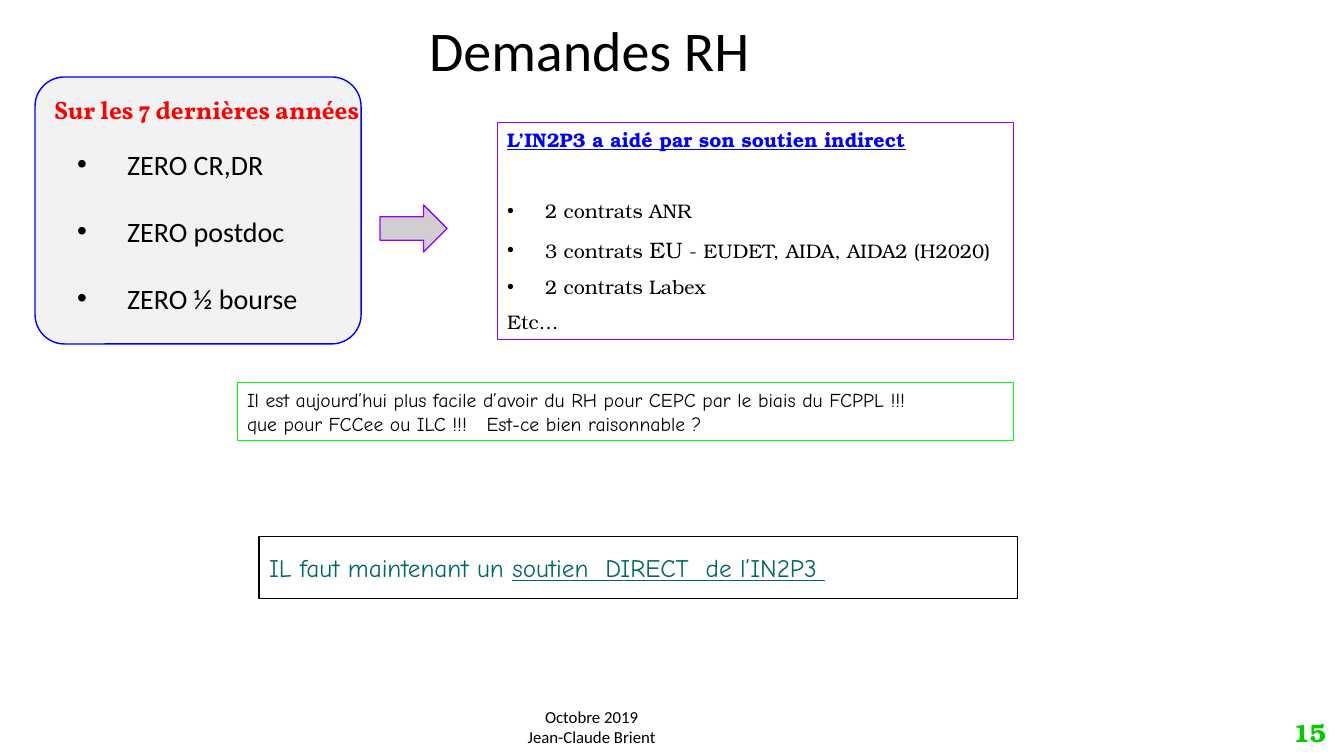
from lxml import etree
from pptx import Presentation
from pptx.dml.color import RGBColor
from pptx.enum.shapes import MSO_SHAPE
from pptx.enum.text import MSO_ANCHOR, MSO_AUTO_SIZE, PP_ALIGN
from pptx.oxml.ns import qn
from pptx.util import Inches, Pt

ROUNDED, ARROW = MSO_SHAPE.ROUNDED_RECTANGLE, MSO_SHAPE.RIGHT_ARROW
RECTANGLE = MSO_SHAPE.RECTANGLE
LEFT, CENTER, RIGHT = PP_ALIGN.LEFT, PP_ALIGN.CENTER, PP_ALIGN.RIGHT
TOP, MIDDLE = MSO_ANCHOR.TOP, MSO_ANCHOR.MIDDLE
FIT, FIXED = MSO_AUTO_SIZE.SHAPE_TO_FIT_TEXT, MSO_AUTO_SIZE.NONE

SANS, SERIF, COMIC, HEADING = "Calibri", "TeX Gyre Bonum", "Comic Neue", "Vollkorn"
BLACK, BLUE, PURPLE = "000000", "0000FF", "9900FF"
PX_PER_INCH = 100.8


def px(value):
    return round(value * Inches(1) / PX_PER_INCH)


def color(hex_code):
    return RGBColor.from_string(hex_code)


def add_outlined(slide, kind, box, line, weight=0.75, fill=None):
    """Draw a preset shape with an outline and an optional fill."""
    shape = slide.shapes.add_shape(kind, *map(px, box))
    shape.shadow.inherit = False
    if fill:
        shape.fill.solid()
        shape.fill.fore_color.rgb = color(fill)
    else:
        shape.fill.background()
    shape.line.color.rgb = color(line)
    shape.line.width = Pt(weight)
    return shape


def add_label(slide, box):
    return slide.shapes.add_textbox(*map(px, box))


def set_frame(shape, wrap=False, anchor=TOP, inset=5, size=FIT):
    frame = shape.text_frame
    frame.auto_size = size
    frame.word_wrap = wrap
    frame.vertical_anchor = anchor
    frame.margin_left = frame.margin_right = px(10)
    frame.margin_top = frame.margin_bottom = px(inset)
    return frame


def write(frame, lines, font, size, ink=BLACK, bold=False, align=LEFT):
    """Add one paragraph per line; the first fills the empty paragraph."""
    written = []
    for line in lines:
        unused = not frame.paragraphs[0].runs
        paragraph = frame.paragraphs[0] if unused else frame.add_paragraph()
        paragraph.add_run().text = line
        paragraph.alignment = align
        paragraph.font.name = font
        paragraph.font.size = Pt(size)
        paragraph.font.bold = bold
        paragraph.font.color.rgb = color(ink)
        written.append(paragraph)
    return written


def add_bullets(paragraphs, indent):
    for paragraph in paragraphs:
        properties = paragraph._p.get_or_add_pPr()
        properties.set("marL", str(px(indent)))
        properties.set("indent", str(-px(indent)))
        bullet_font = etree.Element(qn("a:buFont"), typeface="Arial")
        bullet = etree.Element(qn("a:buChar"), char="•")
        position = next((i for i, child in enumerate(properties)
                         if child.tag == qn("a:defRPr")), len(properties))
        properties[position:position] = [bullet_font, bullet]


def add_zero_panel(slide):
    panel = add_outlined(slide, ROUNDED, (35, 77, 326, 267), BLUE, 1, "F2F2F2")
    panel.adjustments[0] = 0.11
    write(set_frame(add_label(slide, (44, 89, 328, 40))),
          ["Sur les 7 dernières années"], HEADING, 18, "FF0000", bold=True)
    zeros = write(set_frame(add_label(slide, (67, 142, 243, 179))),
                  ["ZERO CR,DR", "ZERO postdoc", "ZERO ½ bourse"], SANS, 20)
    for zero in zeros[1:]:
        zero.space_before = Pt(24)
    add_bullets(zeros, 50)


def add_support_panel(slide):
    panel = add_outlined(slide, RECTANGLE, (497, 123, 516, 217), PURPLE)
    frame = set_frame(panel)
    heading, = write(frame, ["L’IN2P3 a aidé par son soutien indirect"],
                     SERIF, 14, BLUE, bold=True)
    heading.font.underline = True
    contracts = write(frame, ["2 contrats ANR", "3 contrats ", "2 contrats Labex",
                              "Etc…"], SERIF, 14)
    for contract in contracts:
        contract.line_spacing = 1.5
    contracts[0].space_before = Pt(25.5)
    europe = contracts[1].add_run()
    europe.text = "EU"
    europe.font.size = Pt(16)
    contracts[1].add_run().text = " - EUDET, AIDA, AIDA2 (H2020)"
    add_bullets(contracts[:3], 38)


def add_conclusions(slide):
    remark = add_outlined(slide, RECTANGLE, (237, 383, 776, 58), "00FF00")
    write(set_frame(remark, wrap=True),
          ["Il est aujourd’hui plus facile d’avoir du RH pour CEPC par le biais du FCPPL !!!",
           "que pour FCCee ou ILC !!!   Est-ce bien raisonnable ?"], COMIC, 14)
    request = add_outlined(slide, RECTANGLE, (259, 537, 758, 62), BLACK)
    sentence, = write(set_frame(request, wrap=True, inset=16),
                      ["IL faut maintenant un "], COMIC, 18, "006666")
    support = sentence.add_run()
    support.text = "soutien  DIRECT  de l’IN2P3 "
    support.font.underline = True


def main():
    deck = Presentation()
    deck.slide_width, deck.slide_height = Inches(13.33), Inches(7.5)
    slide = deck.slides.add_slide(deck.slide_layouts[6])

    # Title
    write(set_frame(add_label(slide, (419, 11, 344, 78))), ["Demandes RH"], SANS, 40)

    # Missing staff, leading to indirect support
    add_zero_panel(slide)
    add_outlined(slide, ARROW, (380, 205, 67, 47), PURPLE, 1, "D0CECE")
    add_support_panel(slide)

    # Remark and request
    add_conclusions(slide)

    # Footer and page number
    write(set_frame(add_label(slide, (517, 702, 149, 50))),
          ["Octobre 2019", "Jean-Claude Brient"], SANS, 12, align=CENTER)
    page_number = set_frame(add_label(slide, (1237, 712, 99, 40)),
                            wrap=True, anchor=MIDDLE, size=FIXED)
    write(page_number, ["15"], SERIF, 18, "00CC00", bold=True, align=RIGHT)

    deck.save("out.pptx")


if __name__ == "__main__":
    main()
